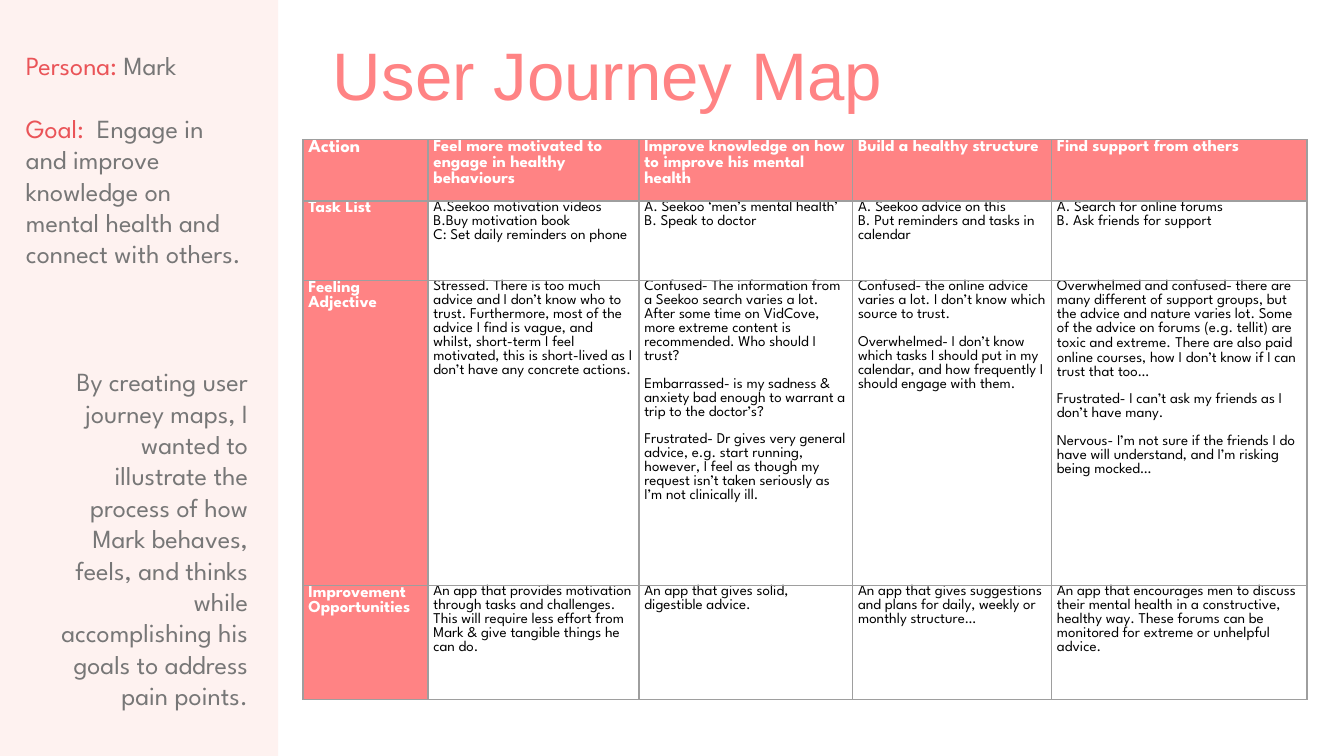
from dataclasses import dataclass

from lxml.etree import SubElement
from pptx import Presentation
from pptx.dml.color import RGBColor as Color
from pptx.enum.shapes import MSO_SHAPE as Shape
from pptx.enum.text import MSO_ANCHOR as Anchor, MSO_AUTO_SIZE as AutoSize, PP_ALIGN as Align
from pptx.oxml.ns import qn
from pptx.util import Inches, Pt


@dataclass(frozen=True)
class Theme:
    coral: str = "FF8384"
    red: str = "EA5458"
    blush: str = "FEF2F0"
    grey: str = "777777"
    border: str = "9E9E9E"
    white: str = "FFFFFF"
    black: str = "000000"
    title_font: str = "Arial"
    text_font: str = "League Spartan"
    title_size: float = 36
    side_size: float = 14
    corner_size: float = 10
    label_size: float = 9
    cell_size: float = 8
    side_gap: float = 16.8
    cell_gap: float = 7.4
    border_width: float = 0.75


@dataclass(frozen=True)
class Span:
    text: str
    color: str
    size: float


@dataclass(frozen=True)
class Frame:
    left: float
    top: float
    width: float
    height: float

    def lengths(self) -> tuple:
        return (across(self.left), down(self.top), across(self.width), down(self.height))


THEME = Theme()
WIDTH = Inches(10)
HEIGHT = WIDTH * 9 // 16

PANEL = Frame(0, 0, 20.7, 100)
TITLE = Frame(20.4, 2.67, 49.6, 11.2)
PERSONA = Frame(0.95, 5.16, 18.5, 31.82)
RATIONALE = Frame(2.65, 42.31, 16.8, 57.78)
TABLE = Frame(22.55, 18.5, 74.7, 74.1)
COLUMNS = (9.3, 15.7, 15.9, 14.8, 19)
ROWS = (8.1, 10.5, 40.35, 15.1)

FORUMS = (
    Span("Overwhelmed and confused- there are many different of support groups, but the advice "
         "and nature varies lot. Some of the advice on forums (e.g. tellit) are toxic and extreme.",
         THEME.black, THEME.cell_size),
    Span(" ", THEME.black, THEME.label_size),
    Span("There are also paid online courses, how I don’t know if I can trust that too…",
         THEME.black, THEME.cell_size),
)

JOURNEY = (
    (["Action"],
     ["Feel more motivated to engage in healthy behaviours"],
     ["Improve knowledge on how to improve his mental health"],
     ["Build a healthy structure"],
     ["Find support from others"]),
    (["Task List"],
     ["A.Seekoo motivation videos", "B.Buy motivation book", "C: Set daily reminders on phone"],
     ["A. Seekoo ‘men’s mental health’", "B. Speak to doctor"],
     ["A. Seekoo advice on this", "B. Put reminders and tasks in calendar"],
     ["A. Search for online forums", "B. Ask friends for support"]),
    (["Feeling Adjective"],
     ["Stressed. There is too much advice and I don’t know who to trust. Furthermore, most of "
      "the advice I find is vague, and whilst, short-term I feel motivated, this is short-lived "
      "as I don’t have any concrete actions."],
     ["Confused- The information from a Seekoo search varies a lot. After some time on VidCove, "
      "more extreme content is recommended. Who should I trust?",
      "Embarrassed- is my sadness & anxiety bad enough to warrant a trip to the doctor’s?",
      "Frustrated- Dr gives very general advice, e.g. start running, however, I feel as though "
      "my request isn’t taken seriously as I’m not clinically ill."],
     ["Confused- the online advice varies a lot. I don’t know which source to trust.",
      "Overwhelmed- I don’t know which tasks I should put in my calendar, and how frequently "
      "I should engage with them."],
     [FORUMS,
      "Frustrated- I can’t ask my friends as I don’t have many.",
      "Nervous- I’m not sure if the friends I do have will understand, and I’m risking being "
      "mocked…"]),
    (["Improvement Opportunities"],
     ["An app that provides motivation through tasks and challenges. This will require less "
      "effort from Mark & give tangible things he can do."],
     ["An app that gives solid, digestible advice."],
     ["An app that gives suggestions and plans for daily, weekly or monthly structure…"],
     ["An app that encourages men to discuss their mental health in a constructive, healthy "
      "way. These forums can be monitored for extreme or unhelpful advice."]),
)
FEELINGS_ROW = 2


def across(percent: float) -> int:
    return round(WIDTH * percent / 100)


def down(percent: float) -> int:
    return round(HEIGHT * percent / 100)


def write(frame, paragraphs, *, size: float, color: str, font: str = THEME.text_font,
          bold: bool = False, align=Align.LEFT, gap: float = 0) -> None:
    frame.word_wrap = True
    for index, content in enumerate(paragraphs):
        para = frame.add_paragraph() if index else frame.paragraphs[0]
        para.alignment = align
        para.line_spacing = 1.0
        para.space_before = Pt(gap if index else 0)
        spans = (Span(content, color, size),) if isinstance(content, str) else content
        for span in spans:
            run = para.add_run()
            run.text = span.text
            run.font.name = font
            run.font.size = Pt(span.size)
            run.font.bold = bold
            run.font.color.rgb = Color.from_string(span.color)


def set_margins(frame, inches: float) -> None:
    frame.margin_left = frame.margin_right = Inches(inches)
    frame.margin_top = frame.margin_bottom = Inches(inches)


def add_panel(page) -> None:
    panel = page.shapes.add_shape(Shape.RECTANGLE, *PANEL.lengths())
    panel.shadow.inherit = False
    panel.fill.solid()
    panel.fill.fore_color.rgb = Color.from_string(THEME.blush)
    panel.line.fill.background()


def add_title(page) -> None:
    title = page.shapes.title
    title.left, title.top, title.width, title.height = TITLE.lengths()
    frame = title.text_frame
    frame.auto_size = AutoSize.NONE
    frame.vertical_anchor = Anchor.TOP
    set_margins(frame, 0.1)
    write(frame, ["User Journey Map"], size=THEME.title_size, color=THEME.coral,
          font=THEME.title_font, align=Align.CENTER)


def add_side_text(page, place: Frame, paragraphs, align) -> None:
    frame = page.shapes.add_textbox(*place.lengths()).text_frame
    frame.vertical_anchor = Anchor.MIDDLE
    set_margins(frame, 0.1)
    write(frame, paragraphs, size=THEME.side_size, color=THEME.grey, align=align,
          gap=THEME.side_gap)


def style_cell(cell, fill: str) -> None:
    cell.margin_left = cell.margin_right = Inches(0.04)
    cell.margin_top = cell.margin_bottom = 0
    properties = cell._tc.get_or_add_tcPr()
    for side in ("a:lnL", "a:lnR", "a:lnT", "a:lnB"):
        line = SubElement(properties, qn(side), w=str(Pt(THEME.border_width)))
        SubElement(SubElement(line, qn("a:solidFill")), qn("a:srgbClr"), val=THEME.border)
    cell.fill.solid()
    cell.fill.fore_color.rgb = Color.from_string(fill)


def add_journey(page) -> None:
    table = page.shapes.add_table(len(ROWS), len(COLUMNS), *TABLE.lengths()).table
    for column, share in zip(table.columns, COLUMNS):
        column.width = across(share)
    for row, share in zip(table.rows, ROWS):
        row.height = down(share)
    for r, texts in enumerate(JOURNEY):
        for c, paragraphs in enumerate(texts):
            cell = table.cell(r, c)
            label = r == 0 or c == 0
            style_cell(cell, THEME.coral if label else THEME.white)
            label_size = THEME.corner_size if r == c == 0 else THEME.label_size
            write(cell.text_frame, paragraphs, bold=label,
                  size=label_size if label else THEME.cell_size,
                  color=THEME.white if label else THEME.black,
                  gap=THEME.cell_gap if r == FEELINGS_ROW else 0)


def main() -> None:
    deck = Presentation()
    deck.slide_width, deck.slide_height = WIDTH, HEIGHT
    page = deck.slides.add_slide(deck.slide_layouts.get_by_name("Title Only"))
    add_title(page)
    add_panel(page)
    add_journey(page)
    size = THEME.side_size
    add_side_text(page, PERSONA, [
        (Span("Persona: ", THEME.red, size), Span("Mark", THEME.grey, size)),
        (Span("Goal:  ", THEME.red, size),
         Span("Engage in and improve knowledge on mental health and connect with others.",
              THEME.grey, size)),
    ], Align.LEFT)
    add_side_text(page, RATIONALE, [
        "By creating user journey maps, I wanted to illustrate the process of how Mark behaves, "
        "feels, and thinks while accomplishing his goals to address pain points.",
    ], Align.RIGHT)
    deck.save("out.pptx")


if __name__ == "__main__":
    main()
